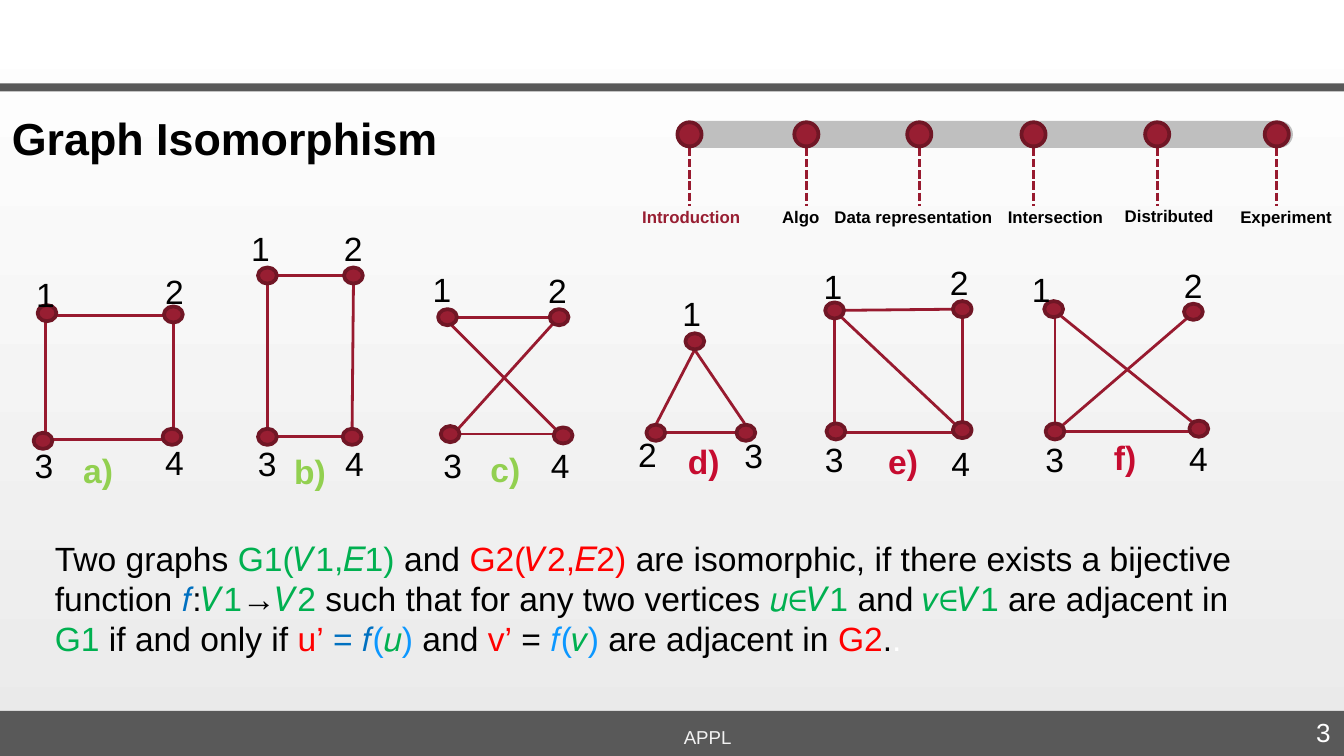
from dataclasses import dataclass

from lxml.etree import SubElement
from pptx import Presentation
from pptx.dml.color import RGBColor
from pptx.enum.dml import MSO_LINE
from pptx.enum.shapes import MSO_CONNECTOR, MSO_SHAPE
from pptx.enum.text import MSO_ANCHOR, PP_ALIGN
from pptx.oxml.ns import qn
from pptx.util import Inches, Pt


@dataclass(frozen=True)
class Theme:
    font: str = "Arial"
    black: str = "000000"
    white: str = "FFFFFF"
    bar: str = "595959"
    footer: str = "F2F2F2"
    background: str = "EAEAEA"
    track: str = "BFBFBF"
    node: str = "981E32"
    rim: str = "701625"
    edge: str = "981A2F"
    lime: str = "92D050"
    crimson: str = "C60C30"
    green: str = "00B050"
    red: str = "FF0000"
    blue: str = "0070C0"
    sky: str = "0C97FF"
    title_size: int = 24
    text_size: int = 18
    number_size: int = 14
    footer_size: int = 10
    step_size: int = 9
    edge_width: float = 1.5
    rim_width: float = 2


theme = Theme()

# Content: every position is in thousandths of the slide width
WIDTH = 1000
HEIGHT = WIDTH * 9 / 16
NODE_WIDTH, NODE_HEIGHT = 14, 12
LABEL_SIZE = (63, 40)
LETTER_SIZE = (72, 40)

# Timeline: name, marker centre, label left, label top, label width
STEPS = [
    ("Introduction", 513, 468, 149, 118),
    ("Algo", 600, 572, 149, 118),
    ("Data representation", 684, 611, 149, 198),
    ("Intersection", 769, 740, 149, 198),
    ("Distributed", 861, 827, 148, 118),
    ("Experiment", 950, 913, 149, 118),
]
CURRENT_STEP = "Introduction"

# Graphs: letter, its place and colour, vertices as (centre, label place),
# edges as (start x, start y, end x, end y)
GRAPHS = [
    ("a)", (52, 330), theme.lime,
     [((35, 233), (17, 199)), ((129, 234), (113, 197)),
      ((32, 328), (16, 326)), ((128, 325), (113, 324))],
     [(34, 235, 129, 235), (129, 235, 129, 325), (129, 327, 34, 327), (34, 325, 34, 235)]),
    ("b)", (209, 331), theme.lime,
     [((199, 205), (177, 165)), ((263, 205), (246, 165)),
      ((199, 325), (182, 325)), ((262, 325), (247, 325))],
     [(206, 205, 256, 205), (199, 211, 199, 319), (206, 325, 255, 325), (262, 319, 263, 211)]),
    ("c)", (355, 329), theme.lime,
     [((333, 236), (312, 195)), ((416, 236), (398, 196)),
      ((335, 323), (320, 326)), ((419, 324), (400, 326))],
     [(341, 323, 416, 323), (339, 236, 409, 236), (336, 242, 414, 320), (341, 319, 415, 237)]),
    ("d)", (502, 323), theme.crimson,
     [((517, 254), (498, 213)), ((488, 322), (465, 318)),
      ((555, 322), (544, 319))],
     [(517, 260, 488, 316), (495, 322, 548, 322), (554, 315, 516, 259)]),
    ("e)", (651, 323), theme.crimson,
     [((621, 231), (603, 193)), ((716, 230), (697, 190)),
      ((622, 321), (604, 322)), ((716, 320), (698, 325))],
     [(621, 231, 716, 230), (716, 231, 716, 320), (716, 322, 621, 322),
      (621, 320, 621, 231), (626, 236, 711, 316)]),
    ("f)", (819, 320), theme.crimson,
     [((784, 230), (758, 195)), ((888, 232), (871, 192)),
      ((785, 321), (768, 322)), ((892, 319), (875, 321))],
     [(887, 321, 792, 321), (785, 324, 785, 235), (883, 237, 790, 317), (788, 234, 887, 314)]),
]

DEFINITION = [
    [("Two graphs ", theme.black), ("G1(𝑉1,𝐸1) ", theme.green), ("and ", theme.black),
     ("G2(𝑉2,𝐸2) ", theme.red),
     ("are isomorphic, if there exists a bijective function ", theme.black),
     ("𝑓", theme.blue), (":", theme.black), ("𝑉1", theme.green), ("→", theme.black),
     ("𝑉2", theme.green), (" such that for any two vertices ", theme.black),
     ("𝑢∈𝑉1 ", theme.green), ("and ", theme.black), ("𝑣∈𝑉1 ", theme.green),
     ("are adjacent in", theme.black)],
    [("G1", theme.green), (" if and only if ", theme.black), ("u’", theme.red),
     (" = 𝑓", theme.blue), ("(", theme.sky), ("𝑢", theme.green), (") ", theme.sky),
     ("and ", theme.black), ("v’", theme.red), (" = ", theme.black), ("𝑓(", theme.sky),
     ("𝑣", theme.green), (") ", theme.sky), ("are adjacent in ", theme.black),
     ("G2", theme.red), (".", theme.black), (".", theme.white)],
]

presentation = Presentation()
presentation.slide_width = Inches(10)
presentation.slide_height = presentation.slide_width * 9 // 16
slide = presentation.slides.add_slide(presentation.slide_layouts[6])


def units(*values):
    return [round(value * presentation.slide_width / WIDTH) for value in values]


def add_block(kind, box, fill, rim=None):
    shape = slide.shapes.add_shape(kind, *units(*box))
    shape.shadow.inherit = False
    shape.fill.solid()
    shape.fill.fore_color.rgb = RGBColor.from_string(fill)
    if rim:
        shape.line.color.rgb = RGBColor.from_string(rim)
        shape.line.width = Pt(theme.rim_width)
    else:
        shape.line.fill.background()
    return shape


def add_dot(center, width, height):
    x, y = center
    box = (x - width / 2, y - height / 2, width, height)
    add_block(MSO_SHAPE.OVAL, box, theme.node, theme.rim)


def add_line(ends, dash=None):
    line = slide.shapes.add_connector(MSO_CONNECTOR.STRAIGHT, *units(*ends))
    line.line.color.rgb = RGBColor.from_string(theme.edge)
    line.line.width = Pt(theme.edge_width)
    if dash:
        line.line.dash_style = dash
    SubElement(line._element.spPr, qn("a:effectLst"))


def add_text(box, paragraphs, size, bold=False, align=PP_ALIGN.LEFT, anchor=MSO_ANCHOR.TOP):
    frame = slide.shapes.add_textbox(*units(*box)).text_frame
    frame.word_wrap = True
    frame.vertical_anchor = anchor
    for index, runs in enumerate(paragraphs):
        paragraph = frame.add_paragraph() if index else frame.paragraphs[0]
        paragraph.alignment = align
        for text, color in runs:
            run = paragraph.add_run()
            run.text = text
            run.font.name, run.font.size, run.font.bold = theme.font, Pt(size), bold
            run.font.color.rgb = RGBColor.from_string(color)
    return frame


# Background and bars
background = slide.background.fill
background.gradient()
background.gradient_angle = 90
for stop, color in zip(background.gradient_stops, (theme.background, theme.white)):
    stop.color.rgb = RGBColor.from_string(color)
for top, height in ((529, HEIGHT - 529), (62, 6)):
    add_block(MSO_SHAPE.RECTANGLE, (0, top, WIDTH, height), theme.bar)

# Title and footer
title = add_text((-1, 87, 992, 41), [[("Graph Isomorphism", theme.black)]],
                 theme.title_size, bold=True)
title.paragraphs[0].line_spacing = Pt(22)
add_text((190, 528, 673, 34), [[("APPL", theme.footer)]], theme.footer_size,
         align=PP_ALIGN.CENTER, anchor=MSO_ANCHOR.BOTTOM)
add_text((864, 528, 136, 34), [[("3", theme.white)]], theme.number_size,
         align=PP_ALIGN.RIGHT)

# Timeline
track = add_block(MSO_SHAPE.ROUNDED_RECTANGLE, (504, 90, 458, 20), theme.track)
track.adjustments[0] = 0.5
for name, x, left, top, width in STEPS:
    add_line((x, 110, x, 153), MSO_LINE.SQUARE_DOT)
    add_dot((x, 100), 18, 18)
    color = theme.node if name == CURRENT_STEP else theme.black
    add_text((left, top, width, 25), [[(name, color)]], theme.step_size, bold=True)

# Graphs
for letter, place, color, vertices, edges in GRAPHS:
    for ends in edges:
        add_line(ends)
    for number, (center, label_place) in enumerate(vertices, 1):
        add_dot(center, NODE_WIDTH, NODE_HEIGHT)
        add_text((*label_place, *LABEL_SIZE), [[(str(number), theme.black)]], theme.text_size)
    add_text((*place, *LETTER_SIZE), [[(letter, color)]], theme.text_size, bold=True)

# Definition
add_text((31, 395, 964, 101), DEFINITION, theme.text_size)

presentation.save("out.pptx")
